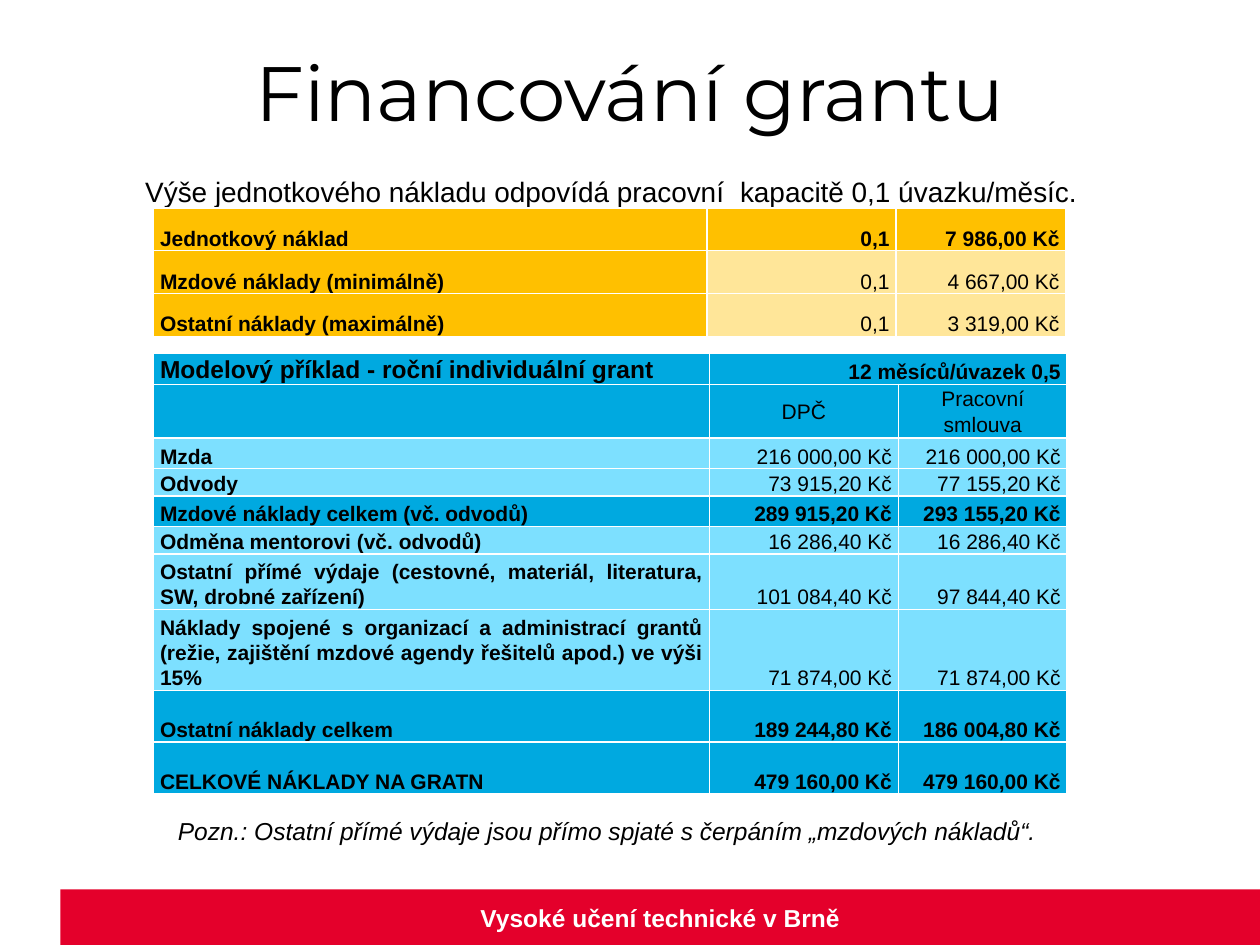
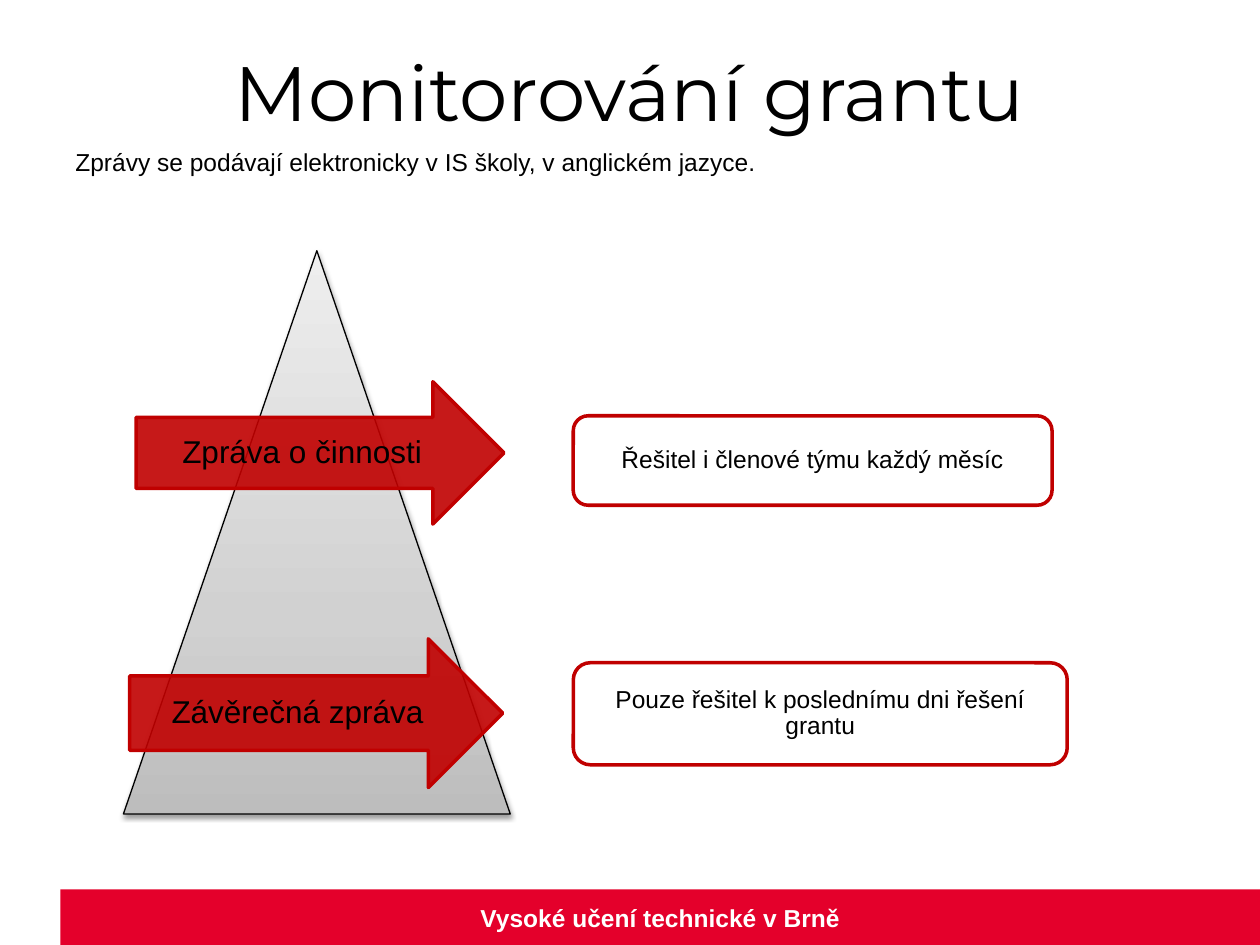
"""Build two slides on the financing and monitoring of a grant."""
from copy import deepcopy

from lxml.etree import SubElement
from pptx import Presentation
from pptx.dml.color import RGBColor
from pptx.enum.shapes import MSO_SHAPE as SHAPE
from pptx.enum.text import MSO_ANCHOR as ANCHOR, MSO_AUTO_SIZE as AUTO_SIZE, PP_ALIGN as ALIGN
from pptx.oxml.ns import qn
from pptx.util import Inches, Pt

COLORS = {
    "black": "000000", "white": "FFFFFF", "band": "E4002B", "red": "C00000",
    "amber": "FFC000", "pale_amber": "FFE699", "blue": "00A9E0", "pale_blue": "7DE0FF",
    "gray_base": "BDBDBD", "gray_middle": "D1D1D1", "gray_tip": "EEEEEE",
}

ROW_STYLES = {
    "amber_head": ("amber", "amber", True, ALIGN.RIGHT),
    "amber_item": ("amber", "pale_amber", False, ALIGN.RIGHT),
    "blue_total": ("blue", "blue", True, ALIGN.RIGHT),
    "blue_subhead": ("blue", "blue", False, ALIGN.CENTER),
    "blue_item": ("pale_blue", "pale_blue", False, ALIGN.RIGHT),
}

UNIT_COSTS = [
    ("amber_head", 0.34, ("Jednotkový náklad", "0,1", "7 986,00 Kč")),
    ("amber_item", 0.34, ("Mzdové náklady (minimálně)", "0,1", "4 667,00 Kč")),
    ("amber_item", 0.34, ("Ostatní náklady (maximálně)", "0,1", "3 319,00 Kč")),
]

MODEL_GRANT = [
    ("blue_total", 0.23, ("Modelový příklad - roční individuální grant", "12 měsíců/úvazek 0,5", "")),
    ("blue_subhead", 0.37, ("", "DPČ", "Pracovní smlouva")),
    ("blue_item", 0.24, ("Mzda", "216 000,00 Kč", "216 000,00 Kč")),
    ("blue_item", 0.22, ("Odvody", "73 915,20 Kč", "77 155,20 Kč")),
    ("blue_total", 0.24, ("Mzdové náklady celkem (vč. odvodů)", "289 915,20 Kč", "293 155,20 Kč")),
    ("blue_item", 0.22, ("Odměna mentorovi (vč. odvodů)", "16 286,40 Kč", "16 286,40 Kč")),
    ("blue_item", 0.44, ("Ostatní přímé výdaje (cestovné, materiál, literatura, SW, drobné zařízení)",
                         "101 084,40 Kč", "97 844,40 Kč")),
    ("blue_item", 0.63, ("Náklady spojené s organizací a administrací grantů (režie, zajištění "
                         "mzdové agendy řešitelů apod.) ve výši 15%", "71 874,00 Kč", "71 874,00 Kč")),
    ("blue_total", 0.41, ("Ostatní náklady celkem", "189 244,80 Kč", "186 004,80 Kč")),
    ("blue_total", 0.41, ("CELKOVÉ NÁKLADY NA GRATN", "479 160,00 Kč", "479 160,00 Kč")),
]

REPORTS = [
    ("Zpráva o činnosti", (1.08, 3.03, 2.92, 1.13),
     "Řešitel i členové týmu každý měsíc", (4.55, 3.3, 3.8, 0.71)),
    ("Závěrečná zpráva", (1.03, 5.07, 2.96, 1.18),
     "Pouze řešitel k poslednímu dni řešení grantu", (4.55, 5.26, 3.92, 0.81)),
]


def color(name):
    return RGBColor.from_string(COLORS[name])


def inches(box):
    return [Inches(length) for length in box]


class Deck:
    def __init__(self):
        self.presentation = Presentation()
        self.presentation.slide_width = Inches(10)
        self.presentation.slide_height = Inches(7.5)
        self.slide = None

    def style(self, paragraph, size, align, font="Arial", ink="black", bold=False, italic=False):
        paragraph.alignment = align
        for run in paragraph.runs:
            run.font.name = font
            run.font.size = Pt(size)
            run.font.bold = bold
            run.font.italic = italic
            run.font.color.rgb = color(ink)

    def new_slide(self, heading, height):
        self.slide = self.presentation.slides.add_slide(self.presentation.slide_layouts[5])
        title = self.slide.shapes.title
        title.left, title.top, title.width, title.height = inches((0.5, 0.3, 9, height))
        frame = title.text_frame
        frame.text = heading
        frame.auto_size = AUTO_SIZE.NONE
        frame.vertical_anchor = ANCHOR.TOP
        self.style(frame.paragraphs[0], 44, ALIGN.CENTER, font="Montserrat")
        band = self.shape(SHAPE.RECTANGLE, (0.48, 7.06, 9.52, 0.44), "band")
        self.label(band, "Vysoké učení technické v Brně", 14, 0.05, ink="white", bold=True)

    def shape(self, preset, box, fill, outline=None, weight=0, opacity=100):
        shape = self.slide.shapes.add_shape(preset, *inches(box))
        shape.shadow.inherit = False
        shape.fill.solid()
        shape.fill.fore_color.rgb = color(fill)
        if opacity < 100:
            tint = shape._element.spPr.find(".//" + qn("a:srgbClr"))
            SubElement(tint, qn("a:alpha"), val=str(opacity * 1000))
        if outline:
            shape.line.color.rgb = color(outline)
            shape.line.width = Pt(weight)
        else:
            shape.line.fill.background()
        return shape

    def label(self, shape, text, size, inset, spacing=1, **look):
        frame = shape.text_frame
        frame.text = text
        frame.word_wrap = True
        frame.vertical_anchor = ANCHOR.MIDDLE
        frame.margin_left = frame.margin_right = Inches(inset)
        frame.margin_top = frame.margin_bottom = Inches(inset)
        frame.paragraphs[0].line_spacing = spacing
        self.style(frame.paragraphs[0], size, ALIGN.CENTER, **look)

    def text(self, content, box, size, align=ALIGN.CENTER, **look):
        frame = self.slide.shapes.add_textbox(*inches(box)).text_frame
        frame.word_wrap = True
        frame.text = content
        self.style(frame.paragraphs[0], size, align, **look)
        return frame.paragraphs[0]

    def pyramid(self, box):
        pyramid = self.shape(SHAPE.ISOSCELES_TRIANGLE, box, "gray_base", "black", 0.75)
        pyramid.fill.gradient()
        pyramid.fill.gradient_angle = 90
        properties = pyramid._element.spPr
        stop_list = properties.find(".//" + qn("a:gsLst"))
        stop_list.append(deepcopy(stop_list[-1]))
        shades = [(0, "gray_base"), (0.35, "gray_middle"), (1, "gray_tip")]
        for stop, (position, shade) in zip(pyramid.fill.gradient_stops, shades):
            stop.position = position
            stop.color.rgb = color(shade)
        shadow = SubElement(properties.find(qn("a:effectLst")), qn("a:outerShdw"),
                            blurRad=str(Pt(3.1)), dist=str(Pt(1.6)), dir="5400000", rotWithShape="0")
        ink = SubElement(shadow, qn("a:srgbClr"), val=COLORS["black"])
        SubElement(ink, qn("a:alpha"), val="38000")

    def table(self, left, top, widths, rows):
        height = sum(row[1] for row in rows)
        box = inches((left, top, sum(widths), height))
        table = self.slide.shapes.add_table(len(rows), len(widths), *box).table
        for column, width in zip(table.columns, widths):
            column.width = Inches(width)
        for table_row, (kind, row_height, texts) in zip(table.rows, rows):
            table_row.height = Inches(row_height)
            label_fill, value_fill, bold, align = ROW_STYLES[kind]
            for index, (cell, text) in enumerate(zip(table_row.cells, texts)):
                is_label = index == 0
                cell.fill.solid()
                cell.fill.fore_color.rgb = color(label_fill if is_label else value_fill)
                cell.margin_left = cell.margin_right = Inches(0.05)
                cell.margin_top = cell.margin_bottom = 0
                cell.vertical_anchor = ANCHOR.MIDDLE if kind == "blue_subhead" else ANCHOR.BOTTOM
                cell.text_frame.text = text
                paragraph = cell.text_frame.paragraphs[0]
                paragraph.line_spacing = 1.07
                self.style(paragraph, 12, ALIGN.JUSTIFY if is_label else align, bold=is_label or bold)
        return table


def financing(deck):
    deck.new_slide("Financování grantu", 1.25)
    intro = deck.text("Výše jednotkového nákladu odpovídá pracovní", (0.35, 1.11, 9, 0.55), 16)
    for part in (" ", "kapacitě 0,1 úvazku/měsíc."):
        intro.add_run().text = part
    deck.style(intro, 16, ALIGN.CENTER)
    intro.runs[1].font.size = Pt(32)
    deck.table(1.22, 1.65, (4.39, 1.5, 1.35), UNIT_COSTS)
    model = deck.table(1.22, 2.8, (4.41, 1.5, 1.34), MODEL_GRANT)
    model.cell(0, 1).merge(model.cell(0, 2))
    heading = model.cell(0, 0)
    heading.vertical_anchor = ANCHOR.MIDDLE
    heading.text_frame.paragraphs[0].runs[0].font.size = Pt(14)
    deck.text("Pozn.: Ostatní přímé výdaje jsou přímo spjaté s čerpáním „mzdových nákladů“.",
              (0.32, 6.43, 9, 0.34), 14, italic=True)


def monitoring(deck):
    deck.new_slide("Monitorování grantu", 0.85)
    deck.pyramid((0.98, 1.99, 3.07, 4.47))
    for report, arrow_box, duty, duty_box in REPORTS:
        arrow = deck.shape(SHAPE.RIGHT_ARROW, arrow_box, "red", "red", 2, opacity=90)
        deck.label(arrow, report, 18, 0.07, spacing=0.9)
        frame = deck.shape(SHAPE.ROUNDED_RECTANGLE, duty_box, "white", "red", 2, opacity=90)
        deck.label(frame, duty, 14, 0.06, spacing=0.9)
    deck.text("Zprávy se podávají elektronicky v IS školy, v anglickém jazyce.",
              (0.5, 1.12, 9, 0.34), 14, ALIGN.LEFT)


def main():
    deck = Deck()
    financing(deck)
    monitoring(deck)
    deck.presentation.save("out.pptx")


if __name__ == "__main__":
    main()
